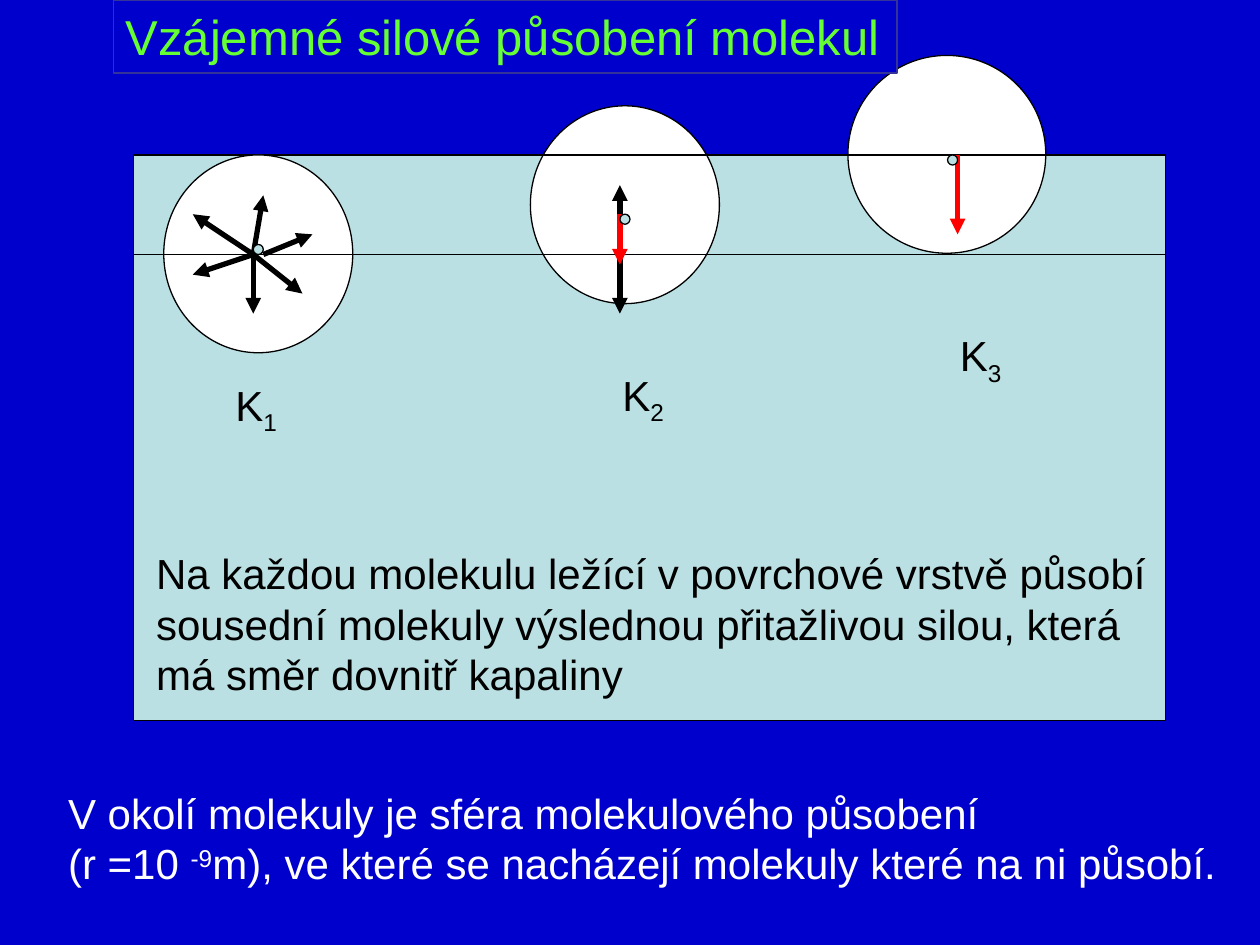
from lxml.etree import SubElement
from pptx import Presentation
from pptx.dml.color import RGBColor
from pptx.enum.shapes import MSO_CONNECTOR, MSO_SHAPE
from pptx.enum.text import MSO_ANCHOR
from pptx.oxml.ns import qn
from pptx.util import Inches, Pt

COLORS = {"back": "0000CC", "water": "BBE0E3", "white": "FFFFFF", "black": "000000",
          "force": "FF0000", "title": "66FF33", "frame": "333399"}
HUES = {name: RGBColor.from_string(code) for name, code in COLORS.items()}

deck = Presentation()
deck.slide_width, deck.slide_height = Inches(10), Inches(7.5)
slide = deck.slides.add_slide(deck.slide_layouts[6])
slide.background.fill.solid()
slide.background.fill.fore_color.rgb = HUES["back"]
shapes = slide.shapes


def add_item(box, kind=None, fill=None, line=None, lines=(), size=24, color="black", wrap=True):
    """Add a shape, or a text box if kind is None; each line is a list of (text, baseline)."""
    place = [Inches(v) for v in box]
    item = shapes.add_shape(kind, *place) if kind else shapes.add_textbox(*place)
    if kind:
        item.shadow.inherit = False
        item.fill.solid()
        item.fill.fore_color.rgb = HUES[fill]
        if line:
            item.line.color.rgb = HUES[line]
            item.line.width = Pt(0.75)
        else:
            item.line.fill.background()
    frame = item.text_frame
    frame.word_wrap = wrap
    frame.vertical_anchor = MSO_ANCHOR.TOP
    for i, parts in enumerate(lines):
        para = frame.paragraphs[0] if i == 0 else frame.add_paragraph()
        para.alignment = 1
        for text, base in parts:
            run = para.add_run()
            run.text = text
            run.font.name, run.font.size = "Arial", Pt(size)
            run.font.color.rgb = HUES[color]
            if base:
                run.font._element.set("baseline", str(base * 1000))
    return item


def add_line(start, end, color="black", width=0.75, arrow=False):
    ends = [Inches(v) for v in (*start, *end)]
    link = shapes.add_connector(MSO_CONNECTOR.STRAIGHT, *ends)
    link.line.color.rgb = HUES[color]
    link.line.width = Pt(width)
    if arrow:
        SubElement(link.line._get_or_add_ln(), qn("a:tailEnd"), type="triangle")
    SubElement(link._element.spPr, qn("a:effectLst"))


# Liquid with the three spheres of action
add_item((1.06, 1.23, 8.19, 4.49), MSO_SHAPE.RECTANGLE, "water", "black")
for left, top, width in [(6.73, 0.44, 1.57), (4.21, 0.84, 1.5), (1.3, 1.23, 1.5)]:
    add_item((left, top, width, 1.57), MSO_SHAPE.OVAL, "white", "black")

# Surface and the lower edge of the surface layer
add_line((4.29, 1.23), (8.62, 1.23))
add_line((1.06, 2.02), (9.25, 2.02))

# Forces on each molecule
hub = (2.01, 2.02)
for tip in [(2.01, 2.49), (1.53, 2.18), (2.4, 2.33), (1.53, 1.7), (2.09, 1.55)]:
    add_line(hub, tip, width=3, arrow=True)
for start, tip, color in [
    ((2.09, 2.02), (2.48, 1.86), "black"),
    ((4.92, 1.7), (4.92, 2.49), "black"),
    ((4.92, 1.7), (4.92, 2.1), "force"),
    ((4.92, 1.7), (4.92, 1.47), "black"),
    ((7.6, 1.23), (7.6, 1.86), "force"),
]:
    add_line(start, tip, color, 3, True)

# Molecules and their labels
for left, top in [(2.01, 1.94), (4.92, 1.7), (7.52, 1.23)]:
    add_item((left, top, 0.08, 0.08), MSO_SHAPE.OVAL, "water", "black")
for num, left, top in [("1", 1.77, 2.96), ("2", 4.84, 2.88), ("3", 7.52, 2.57)]:
    add_item((left, top, 0.55, 0.5), lines=[[("K", 0), (num, -25)]], wrap=False)

# Title and explanations
add_item((0.9, 0, 6.22, 0.58), MSO_SHAPE.RECTANGLE, "back", "frame",
         [[("Vzájemné silové působení molekul", 0)]], 28, "title")
rule = ["Na každou molekulu ležící v povrchové vrstvě působí",
        "sousední molekuly výslednou přitažlivou silou, která",
        "má směr dovnitř kapaliny"]
add_item((1.14, 4.3, 8.06, 1.3), MSO_SHAPE.RECTANGLE, "water",
         lines=[[(text, 0)] for text in rule], wrap=False)
note = add_item((0.35, 5.8, 9.65, 1.3), color="white", lines=[
    [("V okolí molekuly je sféra molekulového působení", 0)],
    [("(r =10 ", 0), ("-9", 30), ("m), ve které se nacházejí molekuly které na ni působí.", 0)],
])
note.text_frame.vertical_anchor = MSO_ANCHOR.BOTTOM
note.text_frame.margin_left = Inches(0.19)

deck.save("out.pptx")
